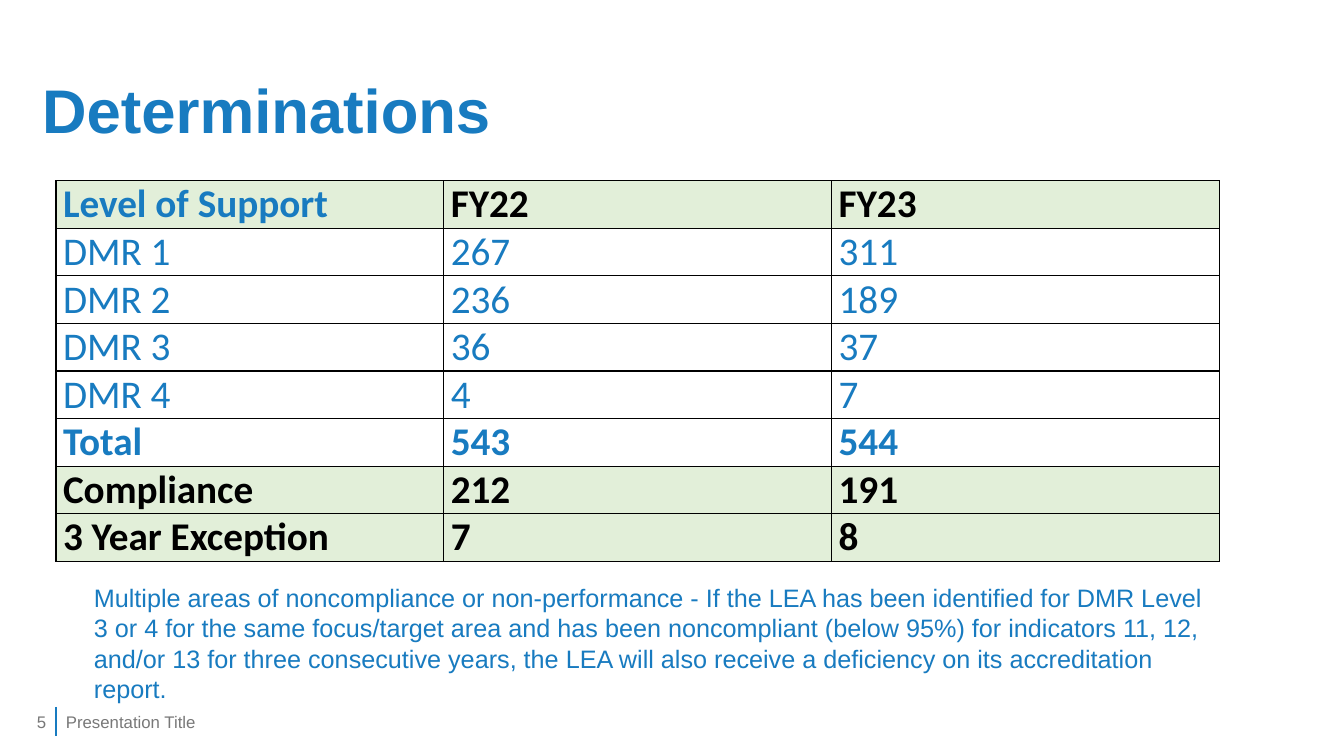
import dataclasses

import lxml.etree
import pptx
import pptx.dml.color
import pptx.enum.shapes
import pptx.enum.text
import pptx.oxml.ns
import pptx.util

ALIGN = pptx.enum.text.PP_ALIGN
ANCHOR = pptx.enum.text.MSO_ANCHOR


@dataclasses.dataclass(frozen=True)
class Theme:
    blue: str = "187BC0"
    gray: str = "787878"
    black: str = "000000"
    white: str = "FFFFFF"
    green: str = "E2EFD9"
    body_font: str = "Arial"
    table_font: str = "Calibri"
    title_size: int = 44
    table_size: int = 28
    note_size: int = 18
    footer_size: int = 12
    rule_width: float = 1.5
    border_width: float = 1


def rgb(color):
    return pptx.dml.color.RGBColor.from_string(color)


def sub_element(parent, tag, **attributes):
    return lxml.etree.SubElement(parent, pptx.oxml.ns.qn(tag), **attributes)


class SlideBuilder:
    """Places elements on a grid of 96 columns by 54 rows."""

    COLUMNS, ROWS = 96, 54

    def __init__(self, presentation, theme):
        self.theme = theme
        self.column = presentation.slide_width / self.COLUMNS
        self.row = presentation.slide_height / self.ROWS
        self.slide = presentation.slides.add_slide(presentation.slide_layouts[6])
        self.slide.background.fill.solid()
        self.slide.background.fill.fore_color.rgb = rgb(theme.white)

    def place(self, left, top, width, height):
        return (round(left * self.column), round(top * self.row),
                round(width * self.column), round(height * self.row))

    def add_run(self, paragraph, text, size, color, bold=False, font=None):
        run = paragraph.add_run()
        run.text = text
        run.font.name = font or self.theme.body_font
        run.font.size = pptx.util.Pt(size)
        run.font.bold = bold
        run.font.color.rgb = rgb(color)

    def text(self, box, text, size, color, bold=False, align=ALIGN.LEFT,
             anchor=ANCHOR.MIDDLE, line_spacing=1.0):
        frame = self.slide.shapes.add_textbox(*self.place(*box)).text_frame
        frame.word_wrap = True
        frame.vertical_anchor = anchor
        paragraph = frame.paragraphs[0]
        paragraph.alignment = align
        paragraph.line_spacing = line_spacing
        self.add_run(paragraph, text, size, color, bold)

    def vertical_rule(self, left, top, height):
        x, y, _, length = self.place(left, top, 0, height)
        rule = self.slide.shapes.add_connector(
            pptx.enum.shapes.MSO_CONNECTOR.STRAIGHT, x, y, x, y + length)
        rule.line.color.rgb = rgb(self.theme.blue)
        rule.line.width = pptx.util.Pt(self.theme.rule_width)
        sub_element(rule._element.spPr, "a:effectLst")

    def table(self, box, rows):
        """Each row is (values, text color, fill color, bold); a color may be per cell."""
        table = self.slide.shapes.add_table(
            len(rows), len(rows[0][0]), *self.place(*box)).table
        for row_index, (values, colors, fill, bold) in enumerate(rows):
            if isinstance(colors, str):
                colors = [colors] * len(values)
            for column_index, (value, color) in enumerate(zip(values, colors)):
                cell = table.cell(row_index, column_index)
                self.table_cell(cell, value, color, fill, bold)

    def table_cell(self, cell, value, color, fill, bold):
        cell.margin_left = cell.margin_right = pptx.util.Inches(0.07)
        cell.margin_top = cell.margin_bottom = 0
        self.add_run(cell.text_frame.paragraphs[0], value, self.theme.table_size,
                     color, bold, self.theme.table_font)
        # Borders come before the fill in the cell properties
        properties = cell._tc.get_or_add_tcPr()
        width = str(pptx.util.Pt(self.theme.border_width))
        for side in ("a:lnL", "a:lnR", "a:lnT", "a:lnB"):
            border = sub_element(properties, side, w=width)
            sub_element(sub_element(border, "a:solidFill"), "a:srgbClr",
                        val=self.theme.black)
        cell.fill.solid()
        cell.fill.fore_color.rgb = rgb(fill)


def main():
    presentation = pptx.Presentation()
    presentation.slide_width = pptx.util.Inches(13.33)
    presentation.slide_height = pptx.util.Inches(7.5)
    theme = Theme()
    builder = SlideBuilder(presentation, theme)
    margin = 4

    # Footer rule and title
    builder.vertical_rule(margin, 50.5, 2.1)
    builder.text((2.3, 2.9, 91.4, 10.4), "Determinations", theme.title_size,
                 theme.blue, bold=True, line_spacing=0.9)

    # Determinations by level of support
    blue, black, green, white = theme.blue, theme.black, theme.green, theme.white
    rows = [
        (("Level of Support", "FY22", "FY23"), (blue, black, black), green, True),
        (("DMR 1", "267", "311"), blue, white, False),
        (("DMR 2", "236", "189"), blue, white, False),
        (("DMR 3", "36", "37"), blue, white, False),
        (("DMR 4", "4", "7"), blue, white, False),
        (("Total", "543", "544"), blue, white, True),
        (("Compliance", "212", "191"), black, green, True),
        (("3 Year Exception", "7", "8"), black, green, True),
    ]
    builder.table((margin, 12.9, 83.1, 3.4 * len(rows)), rows)

    # Footer text and slide number
    footer_top, footer_height = 50.1, 2.9
    builder.text((margin, footer_top, 47, footer_height), "Presentation Title",
                 theme.footer_size, theme.gray)
    builder.text((0, footer_top, margin, footer_height), "5",
                 theme.footer_size, theme.gray, align=ALIGN.RIGHT)

    # Note below the table
    builder.text(
        (6, 41.25, 81.1, 9.4),
        "Multiple areas of noncompliance or non-performance - If the LEA has been "
        "identified for DMR Level 3 or 4 for the same focus/target area and has been "
        "noncompliant (below 95%) for indicators 11, 12, and/or 13 for three "
        "consecutive years, the LEA will also receive a deficiency on its "
        "accreditation report.",
        theme.note_size, theme.blue, anchor=ANCHOR.TOP)

    presentation.save("out.pptx")


if __name__ == "__main__":
    main()
